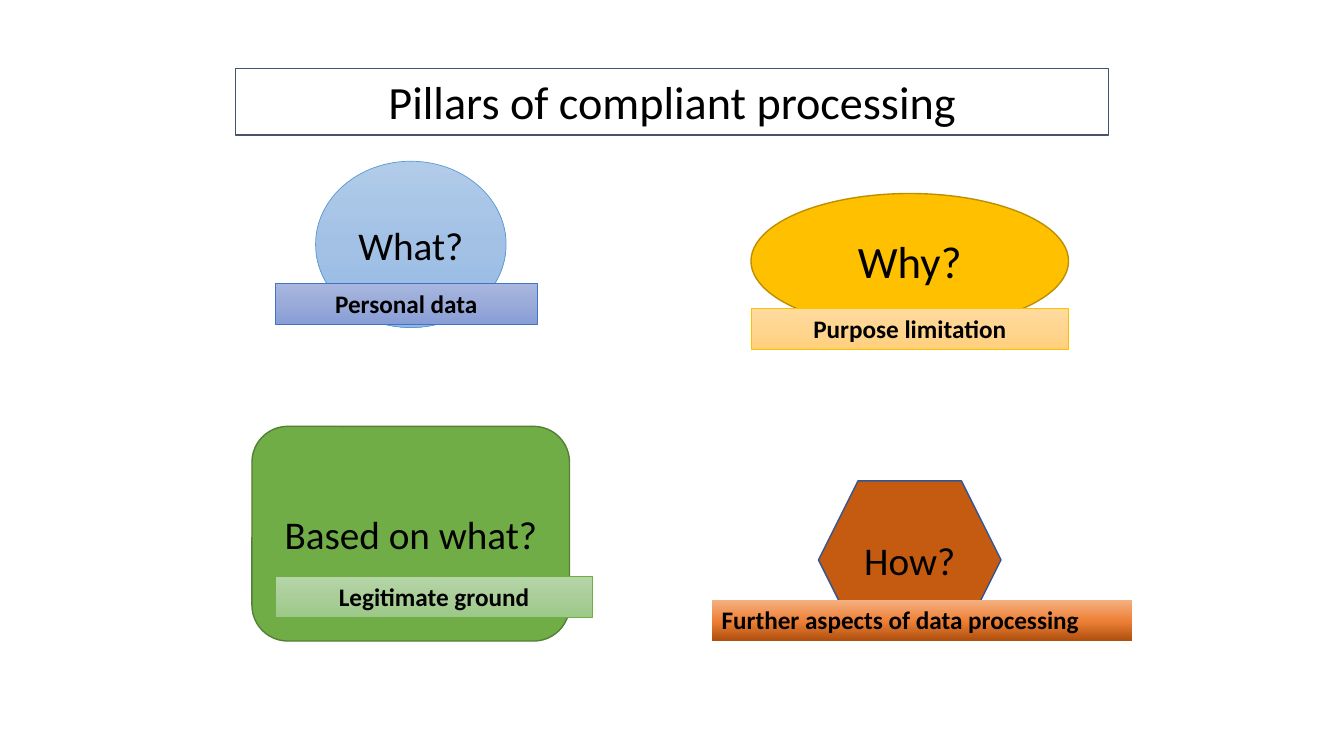
from copy import deepcopy

from pptx import Presentation
from pptx import util as u
from pptx.dml.color import RGBColor
from pptx.enum import shapes, text
from pptx.oxml.ns import qn

BLACK = RGBColor(0x00, 0x00, 0x00)
SLATE = RGBColor(0x44, 0x54, 0x6A)
BLUE = RGBColor(0x5B, 0x9B, 0xD5)
INDIGO = RGBColor(0x44, 0x72, 0xC4)
NAVY = RGBColor(0x32, 0x54, 0x91)
GOLD = RGBColor(0xFF, 0xC0, 0x00)
DARK_GOLD = RGBColor(0xBD, 0x8E, 0x00)
GREEN = RGBColor(0x70, 0xAD, 0x47)
DARK_GREEN = RGBColor(0x53, 0x80, 0x35)
RUST = RGBColor(0xC5, 0x5A, 0x11)
SKY_FADE = [(0, RGBColor(0xB1, 0xCB, 0xE9)), (0.5, RGBColor(0xA3, 0xC1, 0xE5)), (1, RGBColor(0x93, 0xB9, 0xE4))]
INDIGO_FADE = [(0, RGBColor(0xA8, 0xB7, 0xDF)), (0.5, RGBColor(0x9A, 0xAB, 0xD9)), (1, RGBColor(0x88, 0x9E, 0xD7))]
GOLD_FADE = [(0, RGBColor(0xFF, 0xDB, 0x9E)), (0.5, RGBColor(0xFF, 0xD5, 0x90)), (1, RGBColor(0xFF, 0xD0, 0x7C))]
GREEN_FADE = [(0, RGBColor(0xB5, 0xD5, 0xA7)), (0.5, RGBColor(0xAA, 0xCE, 0x9A)), (1, RGBColor(0x9C, 0xC9, 0x87))]
ORANGE_FADE = [(0, RGBColor(0xF4, 0xB1, 0x83)), (0.52, RGBColor(0xEE, 0x81, 0x37)), (1, RGBColor(0xB0, 0x50, 0x0F))]

presentation = Presentation()
presentation.slide_width = u.Inches(13.333)
presentation.slide_height = u.Inches(7.5)
slide = presentation.slides.add_slide(presentation.slide_layouts[6])
COLUMN = presentation.slide_width / 100
ROW = presentation.slide_height / 100


def paint(shape, fill, line, weight):
    if fill is None:
        shape.fill.background()
    elif isinstance(fill, RGBColor):
        shape.fill.solid()
        shape.fill.fore_color.rgb = fill
    else:
        shape.fill.gradient()
        shape.fill.gradient_angle = 270
        stop_list = next(shape.element.iter(qn("a:gsLst")))
        stop_list.append(deepcopy(stop_list[-1]))
        for stop, (position, color) in zip(shape.fill.gradient_stops, fill):
            stop.position = position
            stop.color.rgb = color
    if line is None:
        shape.line.fill.background()
    else:
        shape.line.color.rgb = line
        shape.line.width = u.Pt(weight)


def add_block(kind, label, box, fill, line, weight, size, bold=False, align=text.PP_ALIGN.CENTER):
    left, top, width, height = box
    shape = slide.shapes.add_shape(
        kind, round(left * COLUMN), round(top * ROW), round(width * COLUMN), round(height * ROW))
    shape.shadow.inherit = False
    paint(shape, fill, line, weight)
    is_box = kind == shapes.MSO_SHAPE.RECTANGLE
    anchor = text.MSO_ANCHOR.TOP if is_box else text.MSO_ANCHOR.MIDDLE
    for name, value in {"word_wrap": True, "vertical_anchor": anchor}.items():
        setattr(shape.text_frame, name, value)
    paragraph = shape.text_frame.paragraphs[0]
    paragraph.alignment = align
    run = paragraph.add_run()
    run.text = label
    for name, value in {"name": "Calibri", "size": u.Pt(size), "bold": bold}.items():
        setattr(run.font, name, value)
    run.font.color.rgb = BLACK


add_block(shapes.MSO_SHAPE.RECTANGLE, "Pillars of compliant processing",
          (17.55, 9.07, 64.95, 8.8), None, SLATE, 0.75, 33)

pillars = [
    (shapes.MSO_SHAPE.OVAL, "What?", (23.48, 21.33, 14.18, 22), SKY_FADE, BLUE, 0.5, 28),
    (shapes.MSO_SHAPE.OVAL, "Why?", (55.88, 25.6, 23.63, 17.87), GOLD, DARK_GOLD, 1, 32),
    (shapes.MSO_SHAPE.ROUNDED_RECTANGLE, "Based on what?", (18.75, 56.4, 23.63, 28.4), GREEN, DARK_GREEN, 1, 28),
    (shapes.MSO_SHAPE.HEXAGON, "How?", (60.9, 63.6, 13.58, 20.93), RUST, NAVY, 1, 28),
]
for pillar in pillars:
    add_block(*pillar)

LABEL_HEIGHT = 5.38
labels = [
    ("Personal data", 20.48, 37.47, 19.5, INDIGO_FADE, INDIGO, text.PP_ALIGN.CENTER),
    ("Purpose limitation", 55.88, 40.8, 23.63, GOLD_FADE, GOLD, text.PP_ALIGN.CENTER),
    ("Legitimate ground", 20.48, 76.27, 23.63, GREEN_FADE, GREEN, text.PP_ALIGN.CENTER),
    ("Further aspects of data processing", 52.95, 79.33, 31.28, ORANGE_FADE, None, text.PP_ALIGN.LEFT),
]
for label, left, top, width, fill, line, align in labels:
    add_block(shapes.MSO_SHAPE.RECTANGLE, label, (left, top, width, LABEL_HEIGHT),
              fill, line, 0.5, 18, True, align)

presentation.save("out.pptx")
